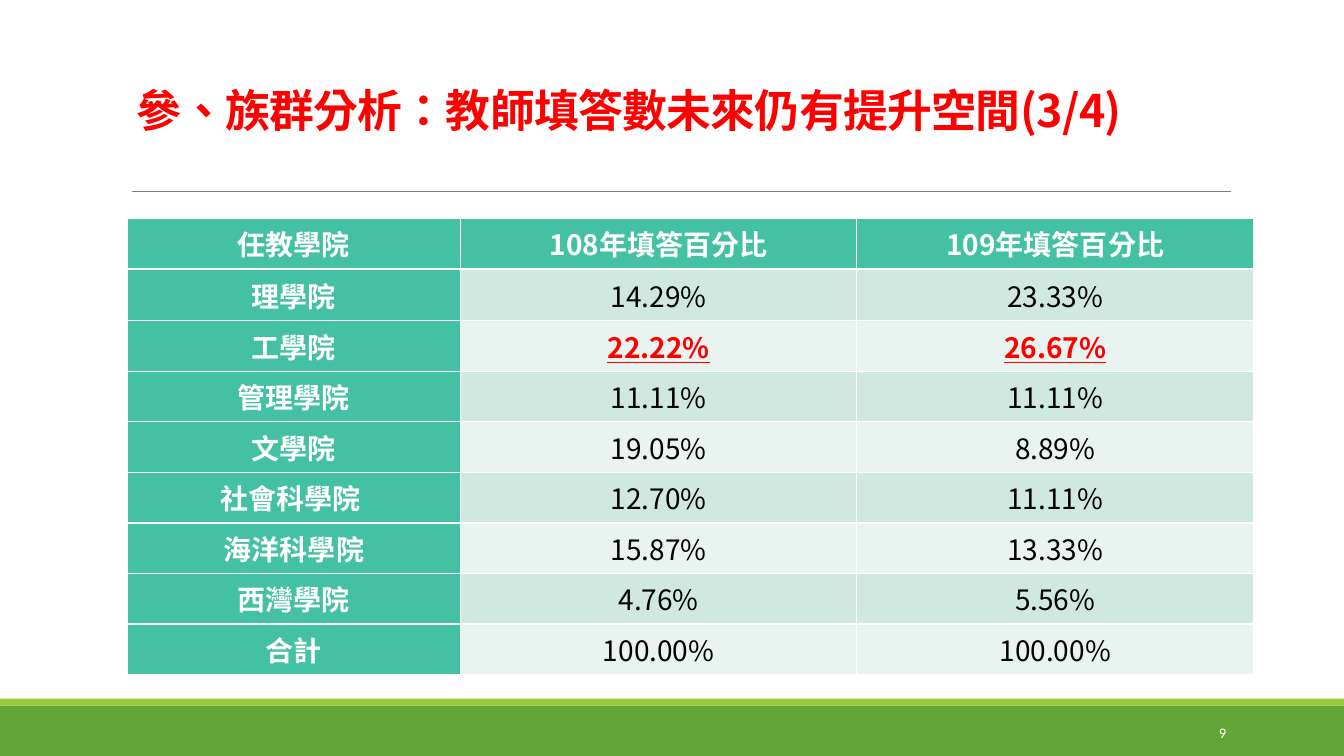
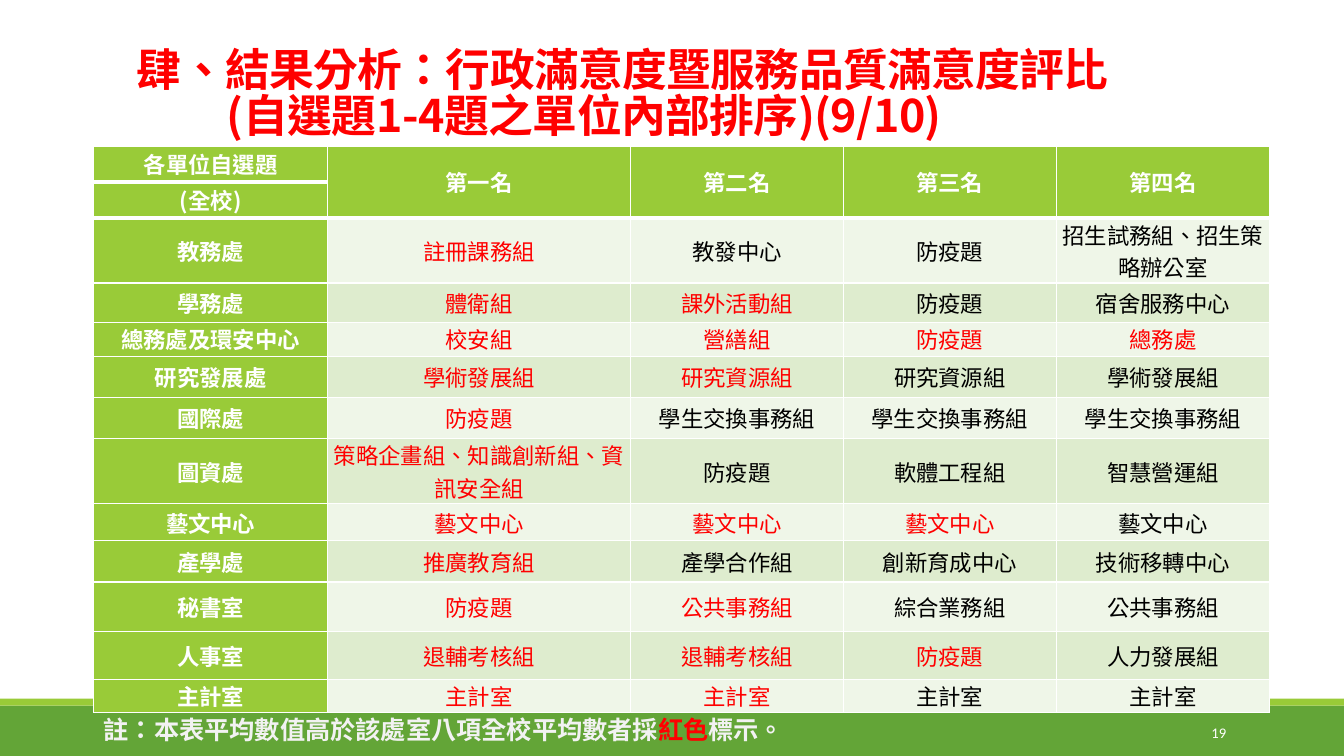
from dataclasses import dataclass
from typing import NamedTuple

from lxml.etree import SubElement
from pptx import Presentation
from pptx.dml.color import RGBColor
from pptx.enum.shapes import MSO_CONNECTOR, MSO_SHAPE
from pptx.enum.text import MSO_ANCHOR as ANCHOR, PP_ALIGN as ALIGN
from pptx.oxml.ns import qn
from pptx.oxml.xmlchemy import OxmlElement
from pptx.util import Pt


@dataclass(frozen=True)
class Theme:
    # Colours
    band: str = "63A537"
    lime: str = "99CB38"
    teal: str = "44C1A3"
    teal_rows: tuple = ("CFE9E0", "E9F4F0")
    lime_rows: tuple = ("EFF6E8", "DEECCE")
    rule: str = "808080"
    red: str = "FF0000"
    black: str = "000000"
    white: str = "FFFFFF"
    note: str = "F2F2F2"
    # Type
    font: str = "Noto Sans CJK SC"
    number_font: str = "Calibri"
    language: str = "zh-TW"
    title_size: float = 32
    large_size: float = 20
    note_size: float = 18
    small_size: float = 16
    number_size: float = 10.5


class Box(NamedTuple):
    x: float
    y: float
    w: float
    h: float

    def pts(self):
        return [Pt(v) for v in self]


T = Theme()
PAGE = Box(0, 0, 960, 540)


def rgb(value):
    return RGBColor.from_string(value)


# Text
def add_run(p, text, size, color, font=T.font, bold=False, underline=False,
            spacing=0):
    r = p.add_run()
    r.text = text
    f = r.font
    f.name, f.size, f.bold = font, Pt(size), bold
    f.color.rgb = rgb(color)
    if underline:
        f.underline = True
    rPr = r._r.get_or_add_rPr()
    rPr.set("lang", T.language)
    rPr.set("altLang", "en-US")
    SubElement(rPr, qn("a:ea")).set("typeface", font)
    if spacing:
        rPr.set("spc", str(round(spacing * 100)))


def write(tf, text, align=ALIGN.LEFT, anchor=ANCHOR.TOP, line_spacing=None,
          hanging=0, marks=None, **style):
    """Fill a frame; marks maps a phrase to the colour it takes."""
    tf.word_wrap = True
    tf.vertical_anchor = anchor
    p = tf.paragraphs[0]
    p.alignment = align
    if line_spacing:
        p.line_spacing = line_spacing
    if hanging:
        pPr = p._p.get_or_add_pPr()
        pPr.set("marL", str(Pt(hanging)))
        pPr.set("indent", str(-Pt(hanging)))
    for i, line in enumerate(text.split("\n")):
        if i:
            p.add_line_break()
        for phrase, color in (marks or {}).items():
            before, found, line = line.partition(phrase)
            if found:
                add_run(p, before, **style)
                add_run(p, phrase, **{**style, "color": color})
            else:
                line = before
        add_run(p, line, **style)


def add_text(s, box, text, **fmt):
    write(s.shapes.add_textbox(*box.pts()).text_frame, text, **fmt)


# Shared slide parts
def add_band(s, box, color):
    sp = s.shapes.add_shape(MSO_SHAPE.RECTANGLE, *box.pts())
    sp.shadow.inherit = False
    sp.fill.solid()
    sp.fill.fore_color.rgb = rgb(color)
    sp.line.fill.background()


def add_footer(s, page, number):
    bottom = page.y + page.h
    add_band(s, Box(page.x, bottom - 36, page.w, 36), T.band)
    add_band(s, Box(page.x, bottom - 41, page.w, 5), T.lime)
    add_text(s, Box(page.x + 780, bottom - 31.5, 103, 29), str(number),
             align=ALIGN.RIGHT, anchor=ANCHOR.MIDDLE, size=T.number_size,
             color=T.white, font=T.number_font)


def add_title(s, box, text, hanging=0):
    add_text(s, box, text, anchor=ANCHOR.BOTTOM, line_spacing=0.85,
             hanging=hanging, size=T.title_size, color=T.red, bold=True,
             spacing=-0.5)


def add_rule(s, x, y, width):
    line = s.shapes.add_connector(MSO_CONNECTOR.STRAIGHT, Pt(x), Pt(y),
                                  Pt(x + width), Pt(y))
    line.line.color.rgb = rgb(T.rule)
    line.line.width = Pt(0.5)
    SubElement(line._element.spPr, qn("a:effectLst"))


# Tables
def set_borders(cell, top, bottom):
    tcPr = cell._tc.get_or_add_tcPr()
    sides = {"a:lnL": 1, "a:lnR": 1, "a:lnT": top, "a:lnB": bottom}
    for i, (tag, width) in enumerate(sides.items()):
        ln = OxmlElement(tag)
        ln.set("w", str(Pt(width)))
        fill = SubElement(ln, qn("a:solidFill"))
        SubElement(fill, qn("a:srgbClr")).set("val", T.white)
        tcPr.insert(i, ln)


def add_grid(s, x, y, widths, heights, header, body, head_fill, row_fills,
             size, inset, head_line, hot):
    """Each body row is (label, how many leading values are hot, values)."""
    rows = header + [[label, *values] for label, _, values in body]
    box = Box(x, y, sum(widths), sum(heights))
    table = s.shapes.add_table(len(rows), len(widths), *box.pts()).table
    for col, width in zip(table.columns, widths):
        col.width = Pt(width)
    for row, height in zip(table.rows, heights):
        row.height = Pt(height)

    n = len(header)
    for i, row in enumerate(rows):
        for j, text in enumerate(row):
            cell = table.cell(i, j)
            style = dict(size=size, color=T.black)
            fill = head_fill
            if i < n or j == 0:
                style.update(color=T.white, bold=True)
            else:
                fill = row_fills[(i - n) % 2]
                if j <= body[i - n][1]:
                    style.update(hot)
            cell.fill.solid()
            cell.fill.fore_color.rgb = rgb(fill)
            set_borders(cell, head_line if 0 < i <= n else 1,
                        head_line if i < n else 1)
            cell.margin_left = cell.margin_right = Pt(inset)
            cell.margin_top = cell.margin_bottom = 0
            cell.vertical_anchor = ANCHOR.MIDDLE
            if text:
                write(cell.text_frame, text, align=ALIGN.CENTER,
                      anchor=None, **style)
    # Header cells with nothing below them run down the whole header
    if n > 1:
        for j, text in enumerate(header[-1]):
            if not text:
                table.cell(0, j).merge(table.cell(n - 1, j))


# Slides
def build_colleges(s, page):
    add_footer(s, page, 9)
    add_rule(s, page.x + 94.3, page.y + 136.8, 784.8)
    add_title(s, Box(page.x + 90.7, page.y + 56, 823, 45),
              "參、族群分析：教師填答數未來仍有提升空間(3/4)")
    add_grid(
        s, page.x + 91, page.y + 156, [238, 283, 283.5],
        [36, 37.2] + [36.1] * 7,
        header=[["任教學院", "108年填答百分比", "109年填答百分比"]],
        body=[
            ("理學院", 0, ["14.29%", "23.33%"]),
            ("工學院", 2, ["22.22%", "26.67%"]),
            ("管理學院", 0, ["11.11%", "11.11%"]),
            ("文學院", 0, ["19.05%", "8.89%"]),
            ("社會科學院 ", 0, ["12.70%", "11.11%"]),
            ("海洋科學院", 0, ["15.87%", "13.33%"]),
            ("西灣學院", 0, ["4.76%", "5.56%"]),
            ("合計", 0, ["100.00%", "100.00%"]),
        ],
        head_fill=T.teal, row_fills=T.teal_rows, size=T.large_size,
        inset=0.7, head_line=1.5,
        hot=dict(color=T.red, bold=True, underline=True))


def build_rankings(s, page):
    add_footer(s, page, 19)
    add_title(s, Box(page.x + 90.7, page.y, 816, 104.4),
              "肆、結果分析：行政滿意度暨服務品質滿意度評比\n"
              "(自選題1-4題之單位內部排序)(9/10)", hanging=64)
    # Rows whose text wraps are tall enough for two lines
    add_grid(
        s, page.x + 67, page.y + 104.6, [167, 216.5, 152, 152, 152.5],
        [25.2, 25.9, 46.5, 28, 24.3, 29.5, 29.5, 46.5, 26.4, 29.5, 35.3,
         34.6, 23.3],
        header=[["各單位自選題", "第一名", "第二名", "第三名", "第四名"],
                ["(全校)", "", "", "", ""]],
        body=[
            ("教務處", 1, ["註冊課務組", "教發中心", "防疫題",
                        "招生試務組、招生策略辦公室"]),
            ("學務處", 2, ["體衛組", "課外活動組", "防疫題", "宿舍服務中心"]),
            ("總務處及環安中心", 4, ["校安組", "營繕組", "防疫題", "總務處"]),
            ("研究發展處", 2, ["學術發展組", "研究資源組", "研究資源組",
                          "學術發展組"]),
            ("國際處", 1, ["防疫題"] + ["學生交換事務組"] * 3),
            ("圖資處", 1, ["策略企畫組、知識創新組、資訊安全組", "防疫題",
                        "軟體工程組", "智慧營運組"]),
            ("藝文中心", 3, ["藝文中心"] * 4),
            ("產學處", 1, ["推廣教育組", "產學合作組", "創新育成中心",
                        "技術移轉中心"]),
            ("秘書室", 2, ["防疫題", "公共事務組", "綜合業務組", "公共事務組"]),
            ("人事室", 3, ["退輔考核組", "退輔考核組", "防疫題", "人力發展組"]),
            ("主計室", 2, ["主計室"] * 4),
        ],
        head_fill=T.lime, row_fills=T.lime_rows, size=T.small_size,
        inset=1.4, head_line=3, hot=dict(color=T.red))
    add_text(s, Box(page.x + 67, page.y + 506.5, 537, 29),
             "註：本表平均數值高於該處室八項全校平均數者採紅色標示。",
             marks={"紅色": T.red}, size=T.note_size, color=T.note, bold=True)


def main():
    prs = Presentation()
    prs.slide_width, prs.slide_height = Pt(PAGE.w), Pt(PAGE.h)
    for build in (build_colleges, build_rankings):
        build(prs.slides.add_slide(prs.slide_layouts[6]), PAGE)
    prs.save("out.pptx")


if __name__ == "__main__":
    main()
